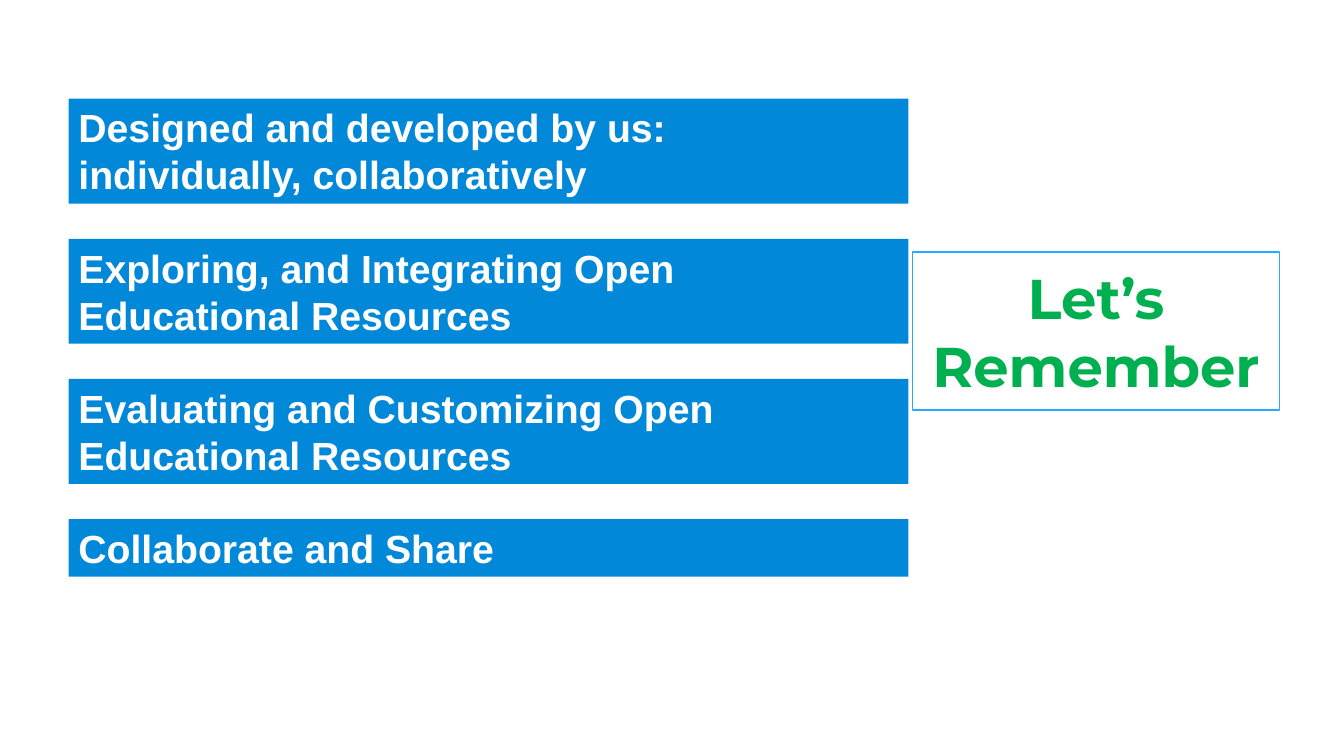
from pptx import Presentation
from pptx.dml.color import RGBColor
from pptx.enum import shapes, text
from pptx.util import Inches, Pt

TITLE = ["Let’s", "Remember"]
POINTS = [  # wording, number of lines
    ("Designed and developed by us: individually, collaboratively", 2),
    ("Exploring, and Integrating Open Educational Resources", 2),
    ("Evaluating and Customizing Open Educational Resources", 2),
    ("Collaborate and Share", 1),
]
BAR_HEIGHTS = {1: 0.57, 2: 1.04}
LEFT, TOP, WIDTH, GAP = 0.68, 0.98, 8.33, 0.35
TITLE_BOX = (9.05, 2.56, 3.64, 1.45)
TITLE_FONT = {"name": "Montserrat", "size": Pt(40), "bold": True}
BAR_FONT = {"name": "Arial", "size": Pt(28), "bold": True}


def rgb(value):
    return RGBColor.from_string(value)


def place(sp, box):
    sp.left, sp.top, sp.width, sp.height = map(Inches, box)


def write(sp, lines, font, color, align, anchor):
    tf = sp.text_frame
    tf.text = "\n".join(lines)
    tf.word_wrap = True
    tf.auto_size = text.MSO_AUTO_SIZE.SHAPE_TO_FIT_TEXT
    tf.vertical_anchor = anchor
    for p in tf.paragraphs:
        p.alignment = align
        for r in p.runs:
            for name, value in font.items():
                setattr(r.font, name, value)
            r.font.color.rgb = rgb(color)


def main():
    prs = Presentation()
    prs.slide_width, prs.slide_height = Inches(13.33), Inches(7.5)
    s = prs.slides.add_slide(prs.slide_layouts[5])

    title = s.shapes.title
    place(title, TITLE_BOX)
    title.fill.solid()
    title.fill.fore_color.rgb = rgb("FFFFFF")
    title.line.color.rgb = rgb("27ACFD")
    title.line.width = Pt(1)
    write(title, TITLE, TITLE_FONT, "00B050",
          text.PP_ALIGN.CENTER, text.MSO_ANCHOR.MIDDLE)

    top = TOP
    for wording, line_count in POINTS:
        height = BAR_HEIGHTS[line_count]
        box = map(Inches, (LEFT, top, WIDTH, height))
        bar = s.shapes.add_shape(shapes.MSO_SHAPE.RECTANGLE, *box)
        bar.shadow.inherit = False
        bar.fill.solid()
        bar.fill.fore_color.rgb = rgb("0288D9")
        bar.line.fill.background()
        write(bar, [wording], BAR_FONT, "FFFFFF",
              text.PP_ALIGN.LEFT, text.MSO_ANCHOR.TOP)
        top += height + GAP

    prs.save("out.pptx")


if __name__ == "__main__":
    main()
